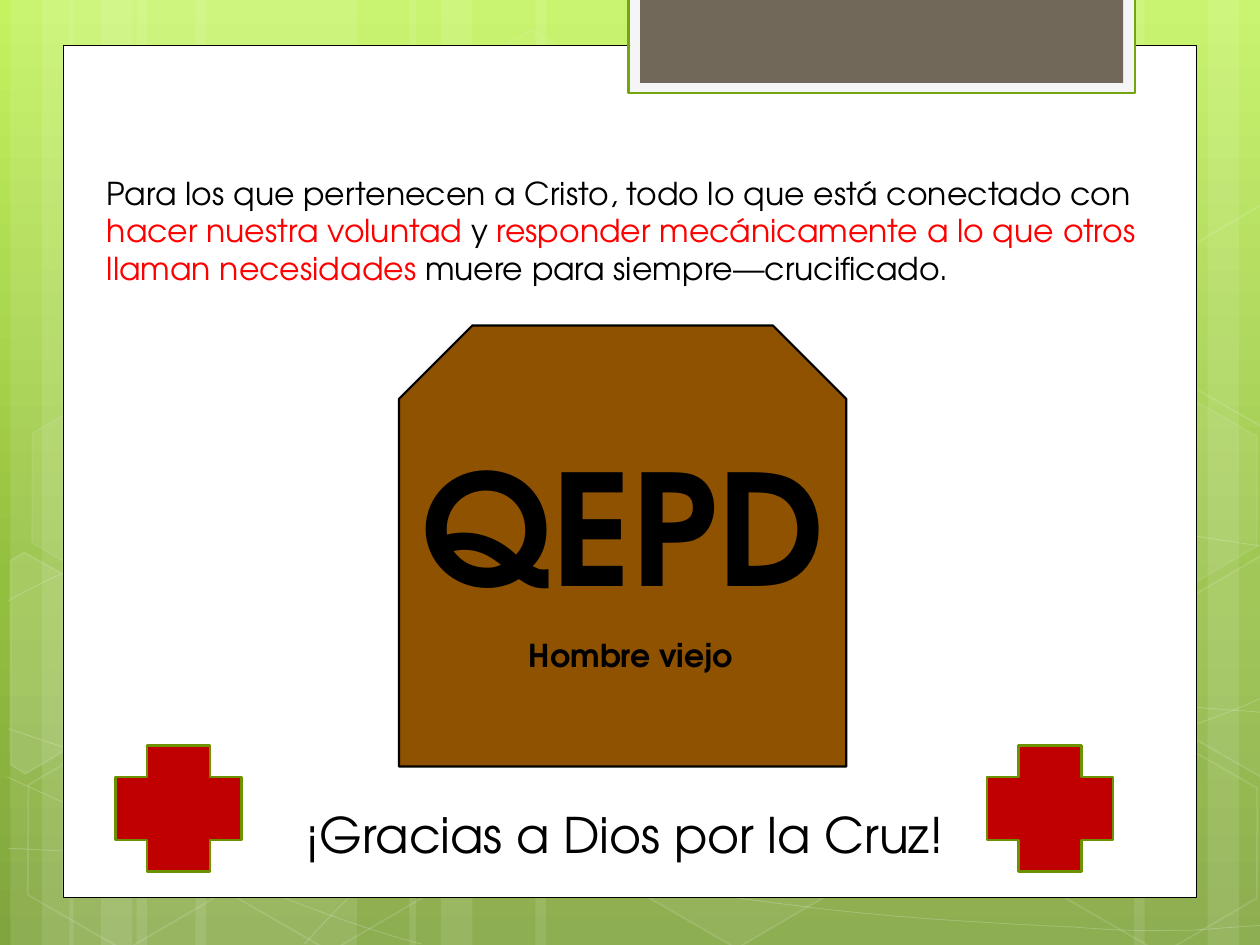
from copy import deepcopy
from math import cos, radians, sin

from lxml.etree import SubElement
from pptx import Presentation
from pptx.dml.color import RGBColor
from pptx.enum.shapes import MSO_SHAPE
from pptx.enum.text import PP_ALIGN
from pptx.oxml.ns import qn
from pptx.util import Inches, Pt

FONT = "TeX Gyre Adventor"
COLS, ROWS = 120, 90  # grid of twelve cells to the inch
TILT = 30  # degrees each hexagon is turned
FINE = 100  # outline units in a cell
BLACK, WHITE, RED = "000000", "FFFFFF", "FF0000"

# Background stripes: left column, width, rotation
STRIPES = [(13, 21, 0), (1, 6, 0), (4, 10, 0), (18.6, 21, 0), (6.6, 6, 0), (9.6, 10, 0),
           (88, 21, 180), (115, 6, 180), (108, 10, 180), (51, 37, 0), (39, 6, 0), (42, 10, 0)]
# Background curves: a start, then two control points and an end per piece
CURVES = [
    [(0.8, 80.8), (7.3, 81.1), (13.8, 81.5), (22.8, 81.4), (31.8, 81.2), (43, 81),
     (55, 79.8), (67, 78.6), (84, 76.3), (95, 74), (106, 71.8), (117.2, 68.2), (120.8, 66.1)],
    [(0.8, 57.2), (4.3, 55.3), (7.8, 53.5), (14.5, 51.7), (21.4, 49.9), (31.1, 47.3),
     (41.6, 46.4), (52.3, 45.6), (65.3, 45.5), (78.5, 46.4), (91.7, 47.4), (113.6, 51.1),
     (120.8, 52.1)],
    [(0.7, 74), (15.2, 80.6), (29.6, 87.2), (40.1, 89.9)],
    [(0.8, 69.4), (4.6, 70.7), (8.4, 72), (15.4, 73.9), (22.3, 75.7), (32.8, 78.7),
     (42.8, 80.8), (52.8, 82.8), (65.4, 85), (75.4, 86.2), (85.3, 87.5), (96, 88),
     (102.4, 88.3), (108.6, 88.8), (110.3, 88.6), (113.4, 88.6), (116.5, 88.4),
     (118.7, 88.2), (120.8, 88.1)],
    [(29, 89.9), (31.2, 87.5), (33.4, 85.1), (36.2, 82.9), (39.1, 80.8), (43.2, 78.4),
     (46.6, 76.7), (49.9, 75), (52, 74.3), (56.4, 73.1), (60.7, 71.9), (68.8, 70.2),
     (73, 69.4), (77.3, 68.5), (77.9, 68.5), (81.6, 68.3), (85.3, 67.9), (91.2, 67.6),
     (95.3, 67.4), (99.5, 67.3), (106.3, 67.4), (106.3, 67.4), (109, 67.4), (111.7, 67.4),
     (114.4, 67.4), (116.5, 67.6), (118.6, 67.7), (119.6, 67.8), (120.7, 67.9),
     (120.4, 67.8), (120.7, 67.9)],
]
# Hexagons: column, row, fill opacity, line opacity
HEXAGONS = [(40.1, 4.3, 4, 8), (59.6, 70.7, 6, 12), (1.3, 70.9, 0, 12), (1.7, 37.4, 7, 8),
            (20.9, 71, 0, 12), (90.4, 54.4, 10, 12), (100.1, 71.2, 0, 12),
            (100.1, 37.7, 7, 8)]
LEFT_CUT = [(1, 53.4), (2.3, 52.6), (11.5, 57.8), (11.4, 68.4), (2.4, 73.7), (1, 72.8)]
RIGHT_CUT = [(111.1, 58.2), (120.1, 52.9), (121.1, 53.5), (121.1, 73.6), (120.2, 74),
             (111.1, 68.8)]


def cells(n):
    return Inches(n / 12)


def rgb(color):
    return RGBColor.from_string(color)


def paint(fill, color, opacity=100):
    if not opacity:
        fill.background()
        return
    fill.solid()
    fill.fore_color.rgb = rgb(color)
    if opacity < 100:
        clr = fill._xPr.find(qn("a:solidFill"))[0]
        SubElement(clr, qn("a:alpha"), val=str(opacity * 1000))


def style(sp, fill, line=None, width=1.0, fill_op=100, line_op=100):
    sp.shadow.inherit = False
    paint(sp.fill, fill, fill_op)
    paint(sp.line.fill, line or WHITE, line_op if line else 0)
    if line:
        sp.line.width = Pt(width)


def add_shape(s, kind, box, *look, **opacity):
    sp = s.shapes.add_shape(kind, *map(cells, box))
    style(sp, *look, **opacity)
    return sp


def add_outline(s, points, close):
    units = [(round(x * FINE), round(y * FINE)) for x, y in points]
    builder = s.shapes.build_freeform(*units[0], scale=cells(1) / FINE)
    builder.add_line_segments(units[1:], close=close)
    return builder.convert_to_shape()


def add_curve(s, points):
    sp = add_outline(s, points, False)
    # Join every three points into one cubic piece
    lines = list(sp._element.iter(qn("a:lnTo")))
    outline = lines[0].getparent()
    for i in range(0, len(lines), 3):
        piece = SubElement(outline, qn("a:cubicBezTo"))
        for line in lines[i:i + 3]:
            piece.append(line[0])
            outline.remove(line)
    style(sp, WHITE, WHITE, 0.5, fill_op=0, line_op=20)


def add_cut_hexagon(s, points, center, fill_op):
    cx, cy = center
    c, d = cos(radians(TILT)), sin(radians(TILT))
    level = [(cx + (x - cx) * c + (y - cy) * d, cy - (x - cx) * d + (y - cy) * c)
             for x, y in points]
    sp = add_outline(s, level, True)
    sp.rotation = TILT
    style(sp, WHITE, WHITE, 1, fill_op=fill_op, line_op=12)


def add_text(s, box, runs, size, bold=None, align=None):
    tf = s.shapes.add_textbox(*map(cells, box)).text_frame
    tf.word_wrap = True
    p = tf.paragraphs[0]
    p.alignment = align
    for text, color in runs:
        r = p.add_run()
        r.text = text
        r.font.name, r.font.size, r.font.bold = FONT, Pt(size), bold
        r.font.color.rgb = rgb(color)


def green_gradient(s):
    fill = s.background.fill
    fill.gradient()
    fill.gradient_angle = 270
    first = fill.gradient_stops[0]._gs
    first.addnext(deepcopy(first))
    stops = [(0, "C3F35F"), (0.62, "93BF3F"), (1, "81A53E")]
    for stop, (position, color) in zip(fill.gradient_stops, stops):
        stop.position = position
        stop.color.rgb = rgb(color)


def backdrop(s):
    green_gradient(s)
    for left, width, rotation in STRIPES:
        sp = add_shape(s, MSO_SHAPE.RECTANGLE, (left, 0, width, ROWS), WHITE, fill_op=10)
        sp.rotation = rotation
    for curve in CURVES:
        add_curve(s, curve)
    for left, top, fill_op, line_op in HEXAGONS:
        sp = add_shape(s, MSO_SHAPE.HEXAGON, (left, top, 21, 18.2), WHITE, WHITE, 1,
                       fill_op=fill_op, line_op=line_op)
        sp.adjustments[0] = 0.285
        sp.rotation = TILT
    # Hexagons cut off by the slide edges
    upper_cut = [(x, y - 33.4) for x, y in RIGHT_CUT]
    add_cut_hexagon(s, LEFT_CUT, (4.3, 64.2), 10)
    add_cut_hexagon(s, RIGHT_CUT, (118.2, 62.4), 4)
    add_cut_hexagon(s, upper_cut, (118.2, 29), 0)


def panel(s, box):
    x, y, w, h = box
    add_shape(s, MSO_SHAPE.RECTANGLE, box, WHITE, BLACK, 0.5)
    # Tab hanging from the top edge
    tab_x, tab_y = x + 53.86, y - 4.5
    add_shape(s, MSO_SHAPE.RECTANGLE, (tab_x, tab_y, 48.24, 9.1), "F5F5F5", "74A510", 1.25)
    add_shape(s, MSO_SHAPE.RECTANGLE, (tab_x + 1.1, tab_y, 46, 8.1), "71685A")


def message(s, box):
    add_text(s, box, [
        ("Para los que pertenecen a Cristo, todo lo que está conectado con ", BLACK),
        ("hacer nuestra voluntad ", RED),
        ("y ", BLACK),
        ("responder mecánicamente a lo que otros llaman necesidades ", RED),
        ("muere para siempre—crucificado.", BLACK)], 18)


def gravestone(s, box):
    x, y, w, h = box
    add_shape(s, MSO_SHAPE.SNIP_2_SAME_RECTANGLE, box, "8F5201", BLACK, 1.25)
    add_text(s, (x + 1, y + 9.6, 43, 19), [("QEPD", BLACK)], 88, True)
    add_text(s, (x + 5.2, y + 29, 33.8, 4.8), [("Hombre viejo", BLACK)], 18, True,
             PP_ALIGN.CENTER)


def thanks(s, box):
    x, y, w, h = box
    add_text(s, (x, y + 5, w, 6.8), [("¡Gracias a Dios por la Cruz!", BLACK)], 28,
             align=PP_ALIGN.CENTER)
    # A cross on each side
    for left in (x + 3, x + 86):
        add_shape(s, MSO_SHAPE.CROSS, (left, y, 12, 12), "C00000", "6D9200", 1.25)


def main():
    prs = Presentation()
    prs.slide_width, prs.slide_height = cells(COLS), cells(ROWS)
    s = prs.slides.add_slide(prs.slide_layouts[6])
    backdrop(s)
    panel(s, (6, 4.3, 108, 81.2))
    message(s, (9, 15.94, 102, 12.1))
    gravestone(s, (38, 31, 42.6, 42))
    thanks(s, (8, 71, 103, 12))
    prs.save("out.pptx")


if __name__ == "__main__":
    main()
